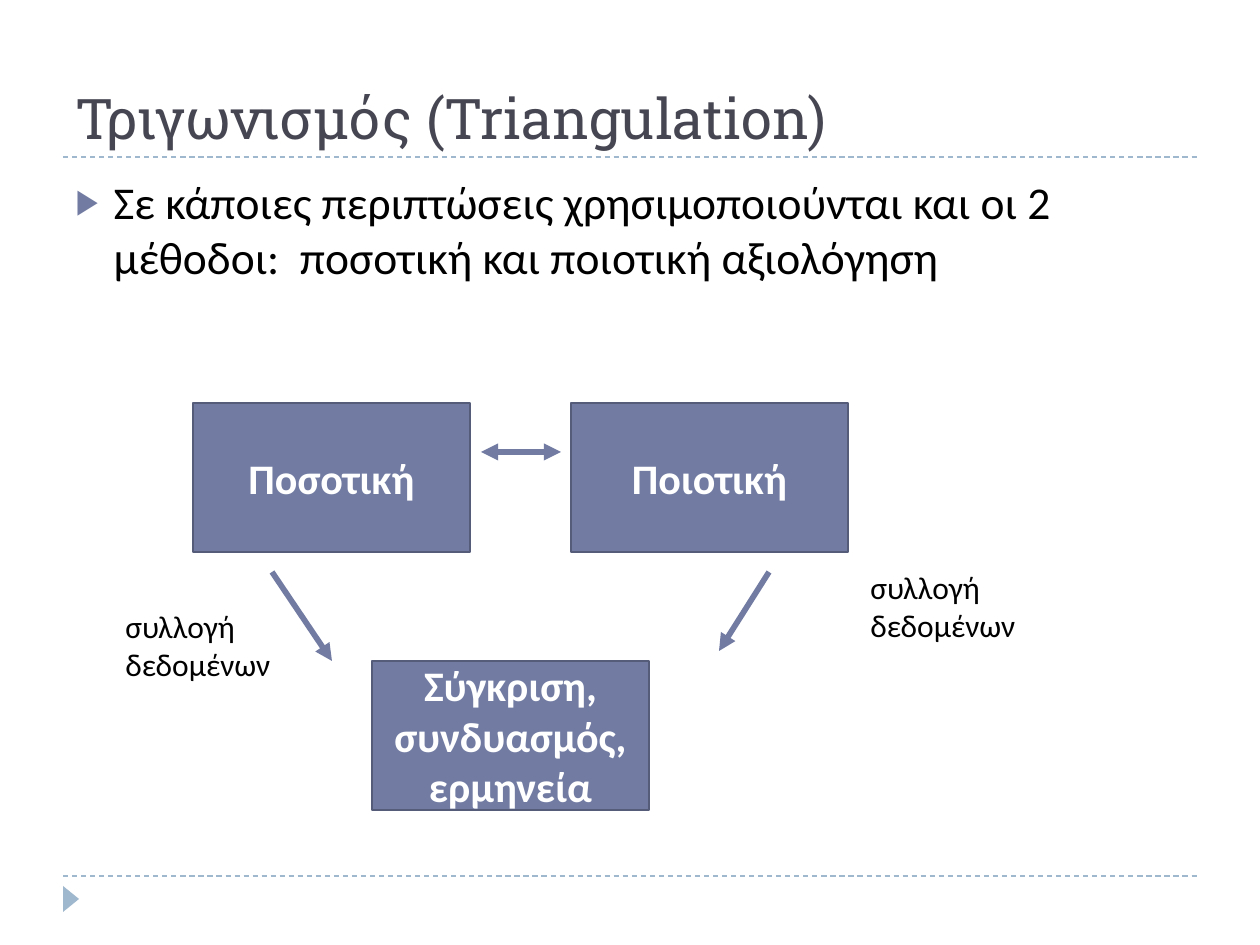
from dataclasses import dataclass

from lxml import etree
from pptx import Presentation
from pptx.dml.color import RGBColor
from pptx.enum.dml import MSO_LINE
from pptx.enum.shapes import MSO_CONNECTOR, MSO_SHAPE
from pptx.enum.text import MSO_ANCHOR, MSO_AUTO_SIZE, PP_ALIGN
from pptx.oxml.ns import qn
from pptx.util import Pt

RECTANGLE, TRIANGLE = MSO_SHAPE.RECTANGLE, MSO_SHAPE.ISOSCELES_TRIANGLE
STRAIGHT, DASH = MSO_CONNECTOR.STRAIGHT, MSO_LINE.DASH
TOP, MIDDLE, BOTTOM = MSO_ANCHOR.TOP, MSO_ANCHOR.MIDDLE, MSO_ANCHOR.BOTTOM
LEFT, CENTER = PP_ALIGN.LEFT, PP_ALIGN.CENTER
FIXED, GROW = MSO_AUTO_SIZE.NONE, MSO_AUTO_SIZE.SHAPE_TO_FIT_TEXT
PX_PER_INCH = 126


def px(length):
    return round(length * 914400 / PX_PER_INCH)


def px_all(lengths):
    return [px(length) for length in lengths]


@dataclass(frozen=True)
class Theme:
    heading: str = "464653"
    text: str = "000000"
    light: str = "FFFFFF"
    accent: str = "727CA3"
    border: str = "545C79"
    rule: str = "9FB8CD"
    heading_font: str = "Roboto Slab"
    body_font: str = "Calibri"
    title_size: int = 32
    list_size: int = 26
    box_size: int = 24
    label_size: int = 18


class SlideBuilder:
    def __init__(self, page, theme):
        self.page = page
        self.theme = theme

    def fill_text(self, shape, lines, size, color, font=None, bold=False,
                  align=LEFT, **frame_format):
        frame = shape.text_frame
        frame_values = {"word_wrap": True, "auto_size": FIXED} | frame_format
        for name, value in frame_values.items():
            setattr(frame, name, value)
        frame.text = "\n".join(lines)
        font_values = {"name": font or self.theme.body_font,
                       "size": Pt(size), "bold": bold}
        for para in frame.paragraphs:
            para.alignment = align
            for span in para.runs:
                for name, value in font_values.items():
                    setattr(span.font, name, value)
                span.font.color.rgb = RGBColor.from_string(color)

    def place(self, shape, area):
        for name, value in zip(("left", "top", "width", "height"), px_all(area)):
            setattr(shape, name, value)

    def title(self, text, area):
        shape = self.page.shapes.title
        self.place(shape, area)
        self.fill_text(shape, [text], self.theme.title_size, self.theme.heading,
                       self.theme.heading_font, vertical_anchor=BOTTOM)

    def bullets(self, lines, area):
        shape = self.page.placeholders[1]
        self.place(shape, area)
        self.fill_text(shape, lines, self.theme.list_size, self.theme.text,
                       vertical_anchor=TOP)
        for para in shape.text_frame.paragraphs:
            para.space_before = Pt(6)
            properties = para._p.get_or_add_pPr()
            properties.set("marL", str(px(38)))
            properties.set("indent", str(px(-38)))
            color = etree.SubElement(properties, qn("a:buClr"))
            etree.SubElement(color, qn("a:srgbClr"), val=self.theme.accent)
            etree.SubElement(properties, qn("a:buSzPct"), val="76000")
            etree.SubElement(properties, qn("a:buChar"), char="▶")

    def shape(self, kind, area, fill, border=None, rotation=0):
        shape = self.page.shapes.add_shape(kind, *px_all(area))
        shape.shadow.inherit = False
        shape.rotation = rotation
        shape.fill.solid()
        shape.fill.fore_color.rgb = RGBColor.from_string(fill)
        if border:
            shape.line.color.rgb = RGBColor.from_string(border)
            shape.line.width = Pt(1.5)
        else:
            shape.line.fill.background()
        return shape

    def box(self, text, area):
        shape = self.shape(RECTANGLE, area, self.theme.accent, self.theme.border)
        self.fill_text(shape, [text], self.theme.box_size, self.theme.light,
                       bold=True, align=CENTER, vertical_anchor=MIDDLE)

    def label(self, lines, area):
        shape = self.page.shapes.add_textbox(*px_all(area))
        self.fill_text(shape, lines, self.theme.label_size, self.theme.text,
                       word_wrap=False, auto_size=GROW)

    def line(self, points, color, width, dash=None, ends=()):
        """Draw a line; ends names the arrowheads: headEnd, tailEnd."""
        connector = self.page.shapes.add_connector(STRAIGHT, *px_all(points))
        connector.line.color.rgb = RGBColor.from_string(color)
        connector.line.width = Pt(width)
        if dash:
            connector.line.dash_style = dash
        properties = connector._element.spPr
        outline = properties.find(qn("a:ln"))
        for end in ends:
            etree.SubElement(outline, qn(f"a:{end}"), type="triangle")
        etree.SubElement(properties, qn("a:effectLst"))

    def rule(self, y):
        self.line((63, y, 1197, y), self.theme.rule, 0.75, dash=DASH)

    def arrow(self, points, ends=("tailEnd",)):
        self.line(points, self.theme.accent, 3.25, ends=ends)


def main():
    deck = Presentation()
    deck.slide_width, deck.slide_height = px(1260), px(945)
    theme = Theme()
    slide = SlideBuilder(deck.slides.add_slide(deck.slide_layouts[1]), theme)

    for y in (876, 157):
        slide.rule(y)
    slide.shape(TRIANGLE, (58, 891, 26, 16), theme.rule, rotation=90)

    slide.title("Τριγωνισμός (Triangulation)", (63, 21, 1134, 136))
    slide.bullets(["Σε κάποιες περιπτώσεις χρησιμοποιούνται και οι 2 "
                   "μέθοδοι:  ποσοτική και ποιοτική αξιολόγηση"],
                  (63, 168, 1134, 680))

    for text, left, top in (("Ποσοτική", 193, 403),
                            ("Ποιοτική", 571, 403),
                            ("Σύγκριση, συνδυασμός, ερμηνεία", 372, 661)):
        slide.box(text, (left, top, 277, 149))

    for left, top in ((113, 601), (858, 562)):
        slide.label(["συλλογή", "δεδομένων"], (left, top, 190, 89))

    slide.arrow((272, 572, 332, 661))
    slide.arrow((769, 572, 719, 651))
    slide.arrow((481, 452, 561, 452), ends=("headEnd", "tailEnd"))

    deck.save("out.pptx")


if __name__ == "__main__":
    main()
